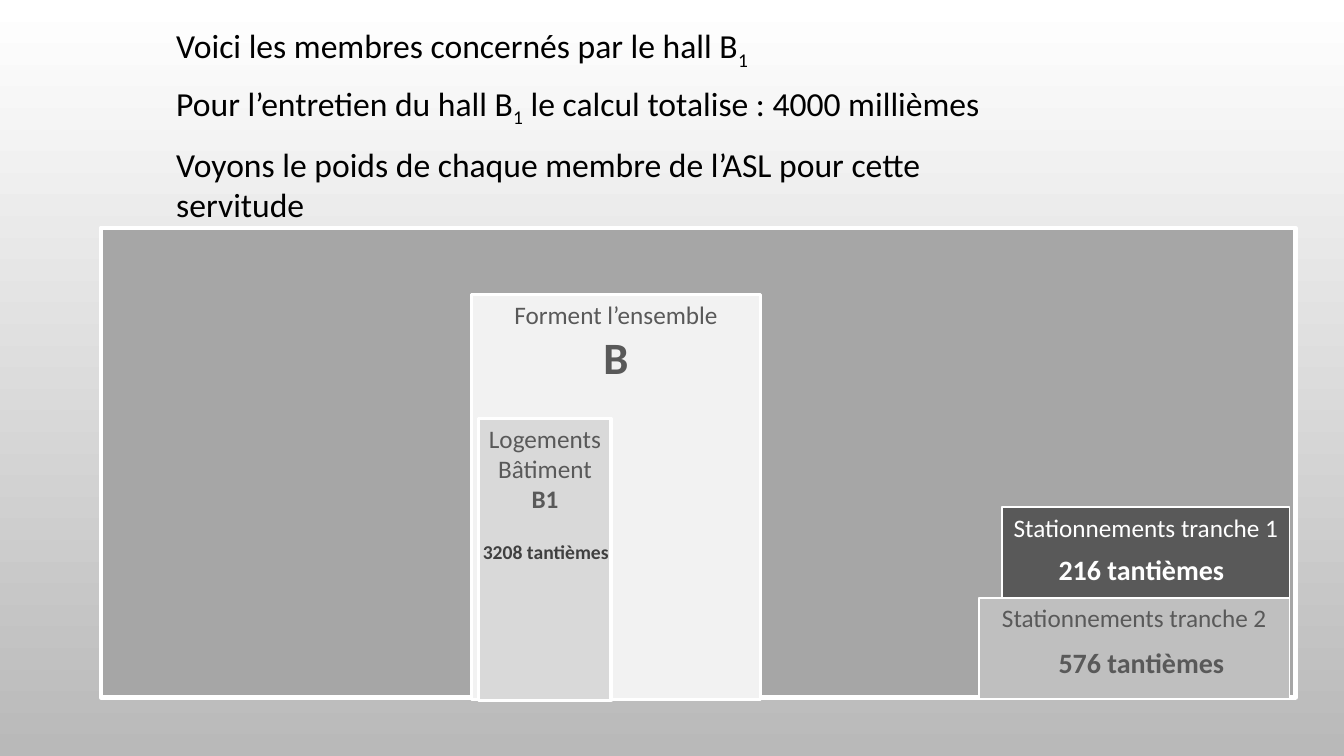
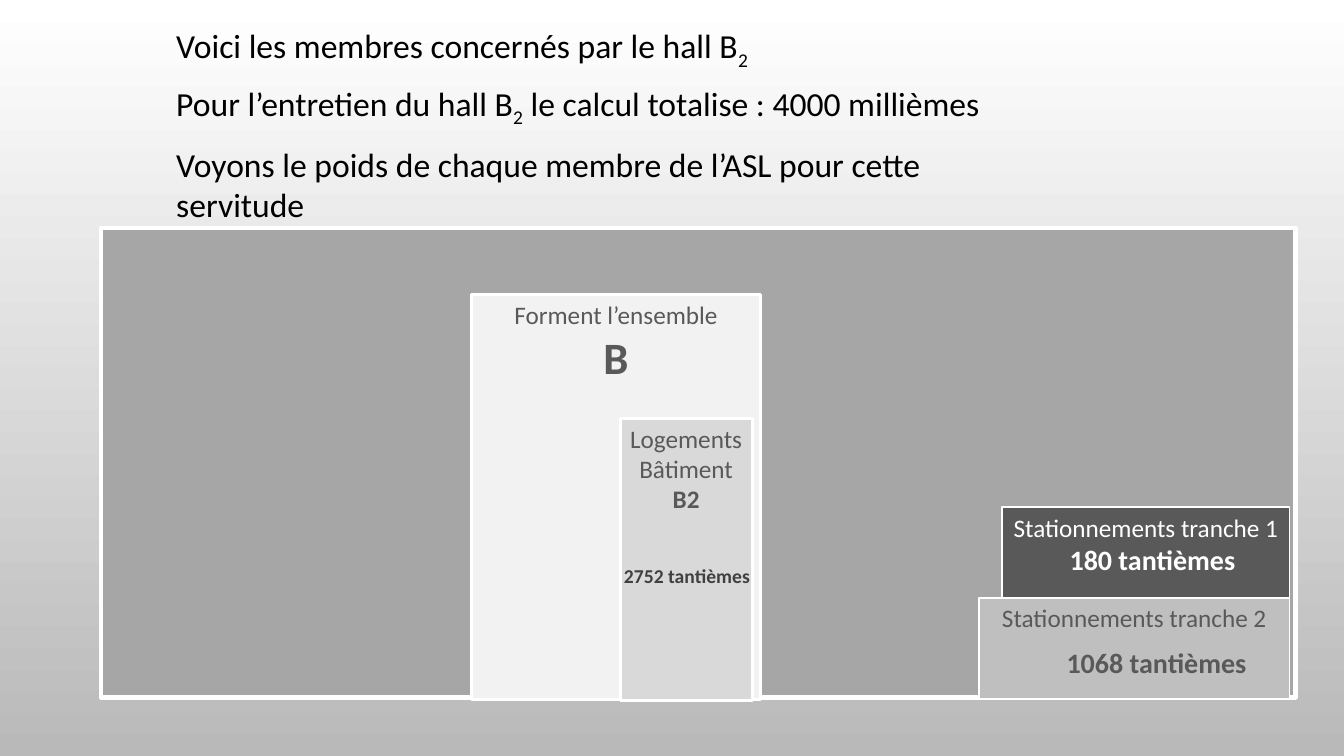
"""Build two slides weighing the members of the ASL that share halls B1 and B2."""
import pptx
import pptx.dml.color
import pptx.enum.text
import pptx.util

PX = 9144
ALIGN = pptx.enum.text.PP_ALIGN
LEFT, CENTER, JUSTIFY = ALIGN.LEFT, ALIGN.CENTER, ALIGN.JUSTIFY
BLACK, WHITE, INK, DARK_INK = "000000", "FFFFFF", "595959", "404040"


def colour(code):
    """Turn a hex string into a colour."""
    return pptx.dml.color.RGBColor.from_string(code)


def write(frame, paragraphs, size, ink, align):
    """Fill a text frame with paragraphs, each a list of (text, style) runs."""
    for index, pieces in enumerate(paragraphs):
        paragraph = frame.add_paragraph() if index else frame.paragraphs[0]
        paragraph.alignment = align
        for text, style in pieces:
            run = paragraph.add_run()
            run.text = text
            run.font.name = "Calibri"
            run.font.size = pptx.util.Pt(32 if style == "big" else size)
            run.font.bold = style in ("bold", "big")
            run.font.color.rgb = colour(ink)
            if style == "sub":
                run._r.get_or_add_rPr().set("baseline", "-25000")


deck = pptx.Presentation()
deck.slide_width, deck.slide_height = 1333 * PX, 750 * PX

backdrop = deck.slide_master.background.fill
backdrop.gradient()
backdrop.gradient_angle = 270
for stop, shade in zip(backdrop.gradient_stops, (WHITE, "B9B9B9")):
    stop.color.rgb = colour(shade)

halls = [
    {"number": "1", "housing_left": 475,
     "shares": [("3208 tantièmes", 469, 531, 146, 34, 14, DARK_INK),
                ("216 tantièmes", 1040, 543, 185, 44, 20, WHITE),
                ("576 tantièmes", 1040, 635, 185, 44, 20, INK)]},
    {"number": "2", "housing_left": 615,
     "shares": [("2752 tantièmes", 609, 555, 146, 34, 14, DARK_INK),
                ("180 tantièmes", 1051, 533, 185, 44, 20, WHITE),
                ("1068 tantièmes", 1048, 635, 200, 44, 20, INK)]},
]

for hall in halls:
    slide = deck.slides.add_slide(deck.slide_layouts[6])
    number = hall["number"]

    blocks = [
        (100, 226, 1185, 466, "A6A6A6", 3, INK, []),
        (468, 292, 286, 402, "F2F2F2", 2.25, INK,
         [[("Forment l’ensemble", "plain")], [("B", "big")]]),
        (hall["housing_left"], 415, 131, 280, "D9D9D9", 2.25, INK,
         [[("Logements", "plain")], [("Bâtiment ", "plain"), ("B" + number, "bold")]]),
        (971, 593, 308, 100, "BFBFBF", 1.25, INK, [[("Stationnements tranche 2", "plain")]]),
        (994, 503, 285, 90, "595959", 1.25, WHITE, [[("Stationnements tranche 1", "plain")]]),
    ]
    for left, top, width, height, fill, border, ink, label in blocks:
        block = slide.shapes.add_shape(
            pptx.enum.shapes.MSO_SHAPE.RECTANGLE, left * PX, top * PX, width * PX, height * PX)
        block.shadow.inherit = False
        block.fill.solid()
        block.fill.fore_color.rgb = colour(fill)
        block.line.color.rgb = colour(WHITE)
        block.line.width = pptx.util.Pt(border)
        block.text_frame.vertical_anchor = pptx.enum.text.MSO_ANCHOR.TOP
        write(block.text_frame, label, 18, ink, CENTER)

    statements = [
        (20, 1027, JUSTIFY,
         [("Voici les membres concernés par le hall B", "plain"), (number, "sub")]),
        (77, 1054, LEFT,
         [("Pour l’entretien du hall B", "plain"), (number, "sub"),
          (" le calcul totalise : 4000 millièmes", "plain")]),
        (138, 887, LEFT,
         [("Voyons le poids de chaque membre de l’ASL pour cette servitude", "plain")]),
    ]
    captions = [(165, top, width, 50, True, 24, BLACK, align, pieces)
                for top, width, align, pieces in statements]
    captions += [(left, top, width, height, False, size, ink, LEFT, [(share, "bold")])
                 for share, left, top, width, height, size, ink in hall["shares"]]
    for left, top, width, height, wraps, size, ink, align, pieces in captions:
        caption = slide.shapes.add_textbox(left * PX, top * PX, width * PX, height * PX)
        caption.text_frame.word_wrap = wraps
        caption.text_frame.auto_size = pptx.enum.text.MSO_AUTO_SIZE.SHAPE_TO_FIT_TEXT
        write(caption.text_frame, [pieces], size, ink, align)

deck.save("out.pptx")
